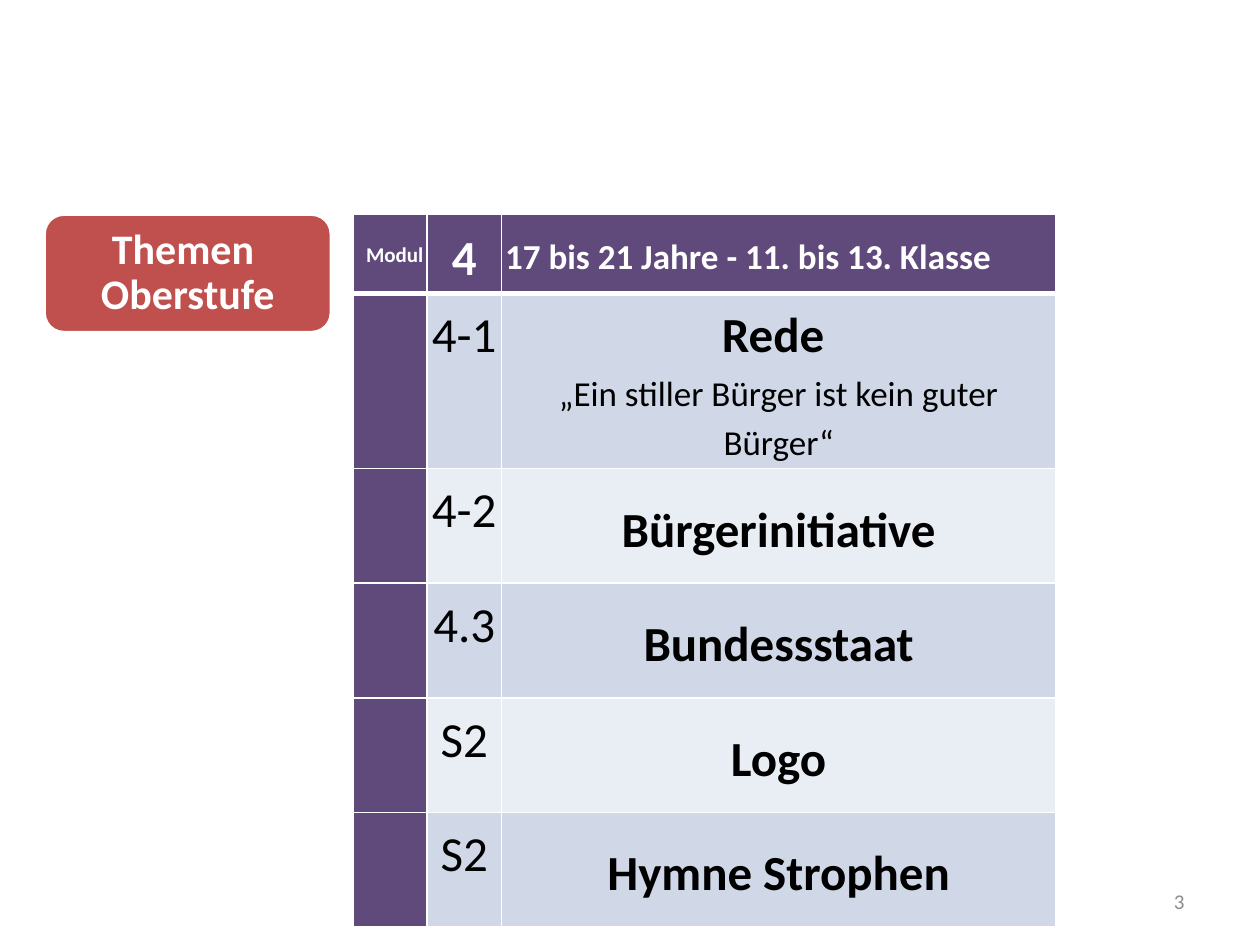
from lxml import etree
from pptx import Presentation
from pptx.dml.color import RGBColor
from pptx.enum.shapes import MSO_SHAPE
from pptx.enum.text import MSO_ANCHOR, PP_ALIGN
from pptx.oxml.ns import qn
from pptx.util import Inches, Pt

LEFT, CENTER, RIGHT = PP_ALIGN.LEFT, PP_ALIGN.CENTER, PP_ALIGN.RIGHT
TOP, MIDDLE = MSO_ANCHOR.TOP, MSO_ANCHOR.MIDDLE
ROUNDED = MSO_SHAPE.ROUNDED_RECTANGLE

COLORS = {
    "purple": "604A7B", "red": "C0504D", "white": "FFFFFF", "black": "000000",
    "band_dark": "D0D8E8", "band_light": "E9EDF4", "grey": "8C8C8C",
}


def color(name):
    return RGBColor.from_string(COLORS[name])


def write(paragraph, text, size=28, ink="black", bold=False, align=CENTER,
          spacing=1.15, after=0):
    paragraph.text = text
    paragraph.alignment = align
    paragraph.line_spacing = spacing
    paragraph.space_after = Pt(after)
    for run in paragraph.runs:
        run.font.name = "Calibri"
        run.font.size = Pt(size)
        run.font.bold = bold
        run.font.color.rgb = color(ink)


prs = Presentation()
prs.slide_width, prs.slide_height = Inches(10), Inches(7.5)
slide = prs.slides.add_slide(prs.slide_layouts[6])

# Module table: grid
topics = [
    ("4-1", "Rede "),
    ("4-2", "Bürgerinitiative"),
    ("4.3", "Bundessstaat"),
    ("S2", "Logo"),
    ("S2", "Hymne Strophen"),
]
modules = slide.shapes.add_table(
    len(topics) + 1, 3, Inches(2.8), Inches(1.7), Inches(5.59), Inches(5.18)).table
for column, width in zip(modules.columns, (0.59, 0.59, 4.4)):
    column.width = Inches(width)
for index, row in enumerate(modules.rows):
    row.height = Inches(0.91 if index else 0.63)

# Module table: fills and white borders, thicker below the header
for r, row in enumerate(modules.rows):
    for c, cell in enumerate(row.cells):
        band = "band_dark" if r % 2 else "band_light"
        if r == 0 or c > 0:
            cell.margin_left = cell.margin_right = Inches(0.03)
            cell.margin_top = cell.margin_bottom = Inches(0.03)
        cell.vertical_anchor = TOP if r and c < 2 else MIDDLE
        props = cell._tc.get_or_add_tcPr()
        for side in ("L", "R", "T", "B"):
            thick = (r, side) in ((0, "B"), (1, "T"))
            border = etree.SubElement(props, qn(f"a:ln{side}"), w=str(Pt(3 if thick else 1)))
            border_fill = etree.SubElement(border, qn("a:solidFill"))
            etree.SubElement(border_fill, qn("a:srgbClr"), val=COLORS["white"])
        cell.fill.solid()
        cell.fill.fore_color.rgb = color("purple" if r == 0 or c == 0 else band)

# Module table: header and topics
header = [("Modul", 12, RIGHT), ("4", 28, CENTER),
          ("17 bis 21 Jahre - 11. bis 13. Klasse", 20, LEFT)]
for c, (label, size, align) in enumerate(header):
    write(modules.cell(0, c).text_frame.paragraphs[0], label, size=size,
          ink="white", bold=True, align=align, after=10)
for r, (number, topic) in enumerate(topics, start=1):
    after = 0 if r == 1 else 10
    write(modules.cell(r, 1).text_frame.paragraphs[0], number, after=after)
    write(modules.cell(r, 2).text_frame.paragraphs[0], topic, bold=True, after=after)
write(modules.cell(1, 2).text_frame.add_paragraph(),
      "„Ein stiller Bürger ist kein guter Bürger“", size=20)

# Slide number
page_number = slide.shapes.add_textbox(
    Inches(7.17), Inches(6.95), Inches(2.33), Inches(0.4)).text_frame
page_number.word_wrap = True
page_number.vertical_anchor = MIDDLE
write(page_number.paragraphs[0], "3", size=12, ink="grey", align=RIGHT, spacing=1.0)

# Heading badge
badge = slide.shapes.add_shape(
    ROUNDED, Inches(0.35), Inches(1.7), Inches(2.28), Inches(0.94))
badge.shadow.inherit = False
badge.fill.solid()
badge.fill.fore_color.rgb = color("red")
badge.line.color.rgb = color("white")
badge.line.width = Pt(2)
badge.text_frame.word_wrap = True
badge.text_frame.vertical_anchor = MIDDLE
write(badge.text_frame.paragraphs[0], "Themen \vOberstufe", size=24,
      ink="white", bold=True, spacing=0.9)

prs.save("out.pptx")
